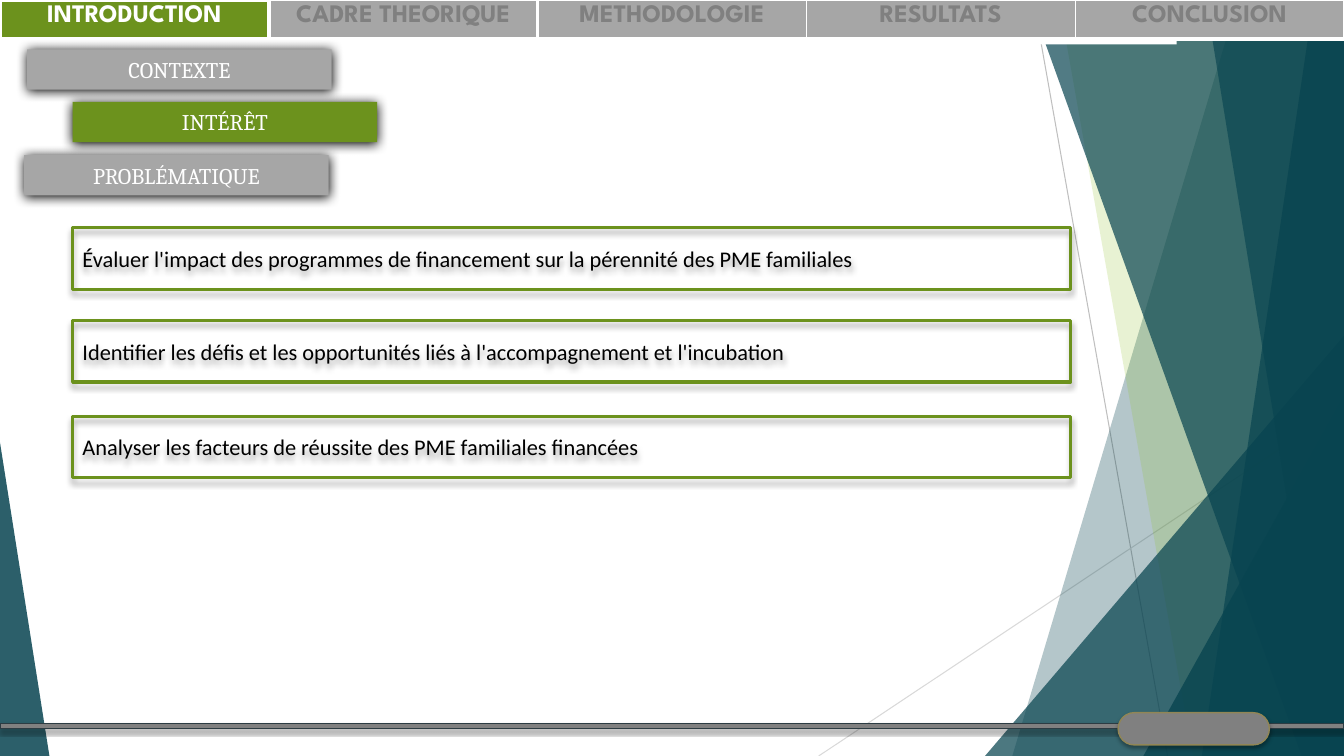
from pptx import Presentation
from pptx.dml.color import RGBColor
from pptx.enum.shapes import MSO_CONNECTOR, MSO_SHAPE
from pptx.enum.text import MSO_ANCHOR as Anchor, PP_ALIGN as Align
from pptx.oxml.ns import qn
from pptx.util import Inches, Pt
from lxml.etree import SubElement

WIDTH, HEIGHT = 13.33, 7.5
WHITE = RGBColor(0xFF, 0xFF, 0xFF)
BLACK = RGBColor(0, 0, 0)
TEAL = RGBColor(0x08, 0x44, 0x50)
LIME = RGBColor(0x90, 0xC2, 0x26)
GREEN = RGBColor(0x6C, 0x92, 0x1D)
GREY = RGBColor(0xA6, 0xA6, 0xA6)
DARK_GREY = RGBColor(0x80, 0x80, 0x80)
LINE_GREY = RGBColor(0xBF, 0xBF, 0xBF)
PALE_GREY = RGBColor(0xD9, 0xD9, 0xD9)
SLATE = RGBColor(0x2C, 0x3C, 0x43)
OLIVE = RGBColor(0x91, 0x86, 0x55)

# Shadows: opacity in percent, blur and distance in points
BOX_SHADOW = (35, 4, 3)
BAR_SHADOW = (35, 3, 2)
BUTTON_SHADOW = (100, 8.5, 1)


def write_text(frame, text, font="Calibri", size=16, color=BLACK, bold=False,
               align=Align.CENTER):
    paragraph = frame.paragraphs[0]
    paragraph.alignment = align
    run = paragraph.add_run()
    run.text = text
    run.font.name = font
    run.font.size = Pt(size)
    run.font.bold = bold
    run.font.color.rgb = color


def style_shape(shape, fill=None, opacity=100, line=None, line_width=1, shadow=None):
    if fill is None:
        shape.fill.background()
    else:
        shape.fill.solid()
        shape.fill.fore_color.rgb = fill
        if opacity < 100:
            color = shape._element.spPr.find(qn("a:solidFill")).find(qn("a:srgbClr"))
            SubElement(color, qn("a:alpha"), val=str(opacity * 1000))
    if line is None:
        shape.line.fill.background()
    else:
        shape.line.color.rgb = line
        shape.line.width = Pt(line_width)
    shape.shadow.inherit = False
    if shadow:
        strength, blur, distance = shadow
        effects = shape._element.spPr.find(qn("a:effectLst"))
        outer = SubElement(effects, qn("a:outerShdw"), blurRad=str(Pt(blur)),
                           dist=str(Pt(distance)), dir="5400000",
                           algn="ctr", rotWithShape="0")
        color = SubElement(outer, qn("a:srgbClr"), val="000000")
        SubElement(color, qn("a:alpha"), val=str(strength * 1000))


def add_block(slide, left, top, width, height, kind=MSO_SHAPE.RECTANGLE,
              adjustment=None, **style):
    shape = slide.shapes.add_shape(kind, Inches(left), Inches(top),
                                   Inches(width), Inches(height))
    if adjustment is not None:
        shape.adjustments[0] = adjustment
    style_shape(shape, **style)
    shape.text_frame.word_wrap = True
    shape.text_frame.vertical_anchor = Anchor.MIDDLE
    return shape


def add_triangle(slide, left, top, width, apex, opacity):
    add_block(slide, left, top, width, HEIGHT - top, MSO_SHAPE.ISOSCELES_TRIANGLE,
              apex, fill=TEAL, opacity=opacity)


def add_wedge(slide, top_x, bottom_x, fill, opacity):
    """Full-height panel with a slanted left edge, flush with the right side."""
    builder = slide.shapes.build_freeform(Inches(top_x), Inches(-0.01))
    corners = [(WIDTH, -0.01), (WIDTH, HEIGHT), (bottom_x, HEIGHT)]
    builder.add_line_segments([(Inches(x), Inches(y)) for x, y in corners])
    style_shape(builder.convert_to_shape(), fill=fill, opacity=opacity)


def add_line(slide, start, end, color):
    ends = [Inches(value) for value in start + end]
    line = slide.shapes.add_connector(MSO_CONNECTOR.STRAIGHT, *ends)
    line.line.color.rgb = color
    line.line.width = Pt(0.75)
    SubElement(line._element.spPr, qn("a:effectLst"))


def add_background(slide):
    add_line(slide, (10.25, 0), (11.58, HEIGHT), LINE_GREY)
    add_line(slide, (WIDTH, 4.03), (8.12, HEIGHT), PALE_GREY)
    add_wedge(slide, 12.28, 10.04, TEAL, 30)
    add_wedge(slide, 10.5, 11.83, LIME, 20)
    add_triangle(slide, 9.77, 3.33, 3.56, 1, 72)
    add_wedge(slide, 10.21, 12.91, TEAL, 70)
    add_wedge(slide, 13.03, 11.92, TEAL, 70)
    add_wedge(slide, 11.96, 13.18, TEAL, 65)
    add_triangle(slide, 11.34, 3.93, 1.99, 1, 80)
    add_triangle(slide, 0, 4.39, 0.49, 0, 85)


def set_borders(cell, widths):
    """Draw white borders; widths are left, right, top and bottom in points."""
    properties = cell._tc.get_or_add_tcPr()
    for index, (side, width) in enumerate(zip("LRTB", widths)):
        border = properties.makeelement(qn(f"a:ln{side}"), {"w": str(Pt(width))})
        fill = SubElement(border, qn("a:solidFill"))
        SubElement(fill, qn("a:srgbClr"), val=str(WHITE))
        properties.insert(index, border)


def add_navigation(slide, titles, current):
    table = slide.shapes.add_table(1, len(titles), 0, 0,
                                   Inches(WIDTH), Inches(0.39)).table
    table.first_row = table.horz_banding = False
    for index, title in enumerate(titles):
        active = index == current
        table.columns[index].width = Inches(WIDTH / len(titles))
        cell = table.cell(0, index)
        cell.fill.solid()
        cell.fill.fore_color.rgb = GREEN if active else GREY
        write_text(cell.text_frame, title, font="League Spartan", size=18,
                   bold=True, color=WHITE if active else DARK_GREY)
        left = 3 if index <= 2 else 1
        right = 3 if index <= 1 else 1
        set_borders(cell, (left, right, 3 if active else 1, 3))


def add_button(slide, left, top, text, fill):
    button = add_block(slide, left, top, 3.02, 0.4, fill=fill, shadow=BUTTON_SHADOW)
    write_text(button.text_frame, text, font="Cambria", color=WHITE)


def add_goal(slide, top, text):
    box = add_block(slide, 0.72, top, 9.9, 0.61, line=GREEN, line_width=2.25,
                    shadow=BOX_SHADOW)
    write_text(box.text_frame, text, align=Align.JUSTIFY)


def main():
    presentation = Presentation()
    presentation.slide_width = Inches(WIDTH)
    presentation.slide_height = Inches(HEIGHT)
    slide = presentation.slides.add_slide(presentation.slide_layouts[6])

    add_background(slide)

    # Chapter navigation on its white strip
    add_block(slide, 1.67, 0, 10, 0.44, fill=WHITE)
    add_navigation(slide, ["INTRODUCTION", "CADRE THEORIQUE", "METHODOLOGIE",
                           "RESULTATS", "CONCLUSION"], current=0)

    # Footer bar and page badge
    add_block(slide, 0, 7.18, WIDTH, 0.05, fill=DARK_GREY, line=SLATE,
              shadow=BAR_SHADOW)
    add_block(slide, 11.09, 7.07, 1.5, 0.32, MSO_SHAPE.ROUNDED_RECTANGLE, 0.5,
              fill=DARK_GREY, line=OLIVE, shadow=BAR_SHADOW)

    # Section buttons
    add_button(slide, 0.27, 0.49, "CONTEXTE", GREY)
    add_button(slide, 0.72, 1.01, "INTÉRÊT", GREEN)
    add_button(slide, 0.24, 1.54, "PROBLÉMATIQUE", GREY)

    # Points of interest
    add_goal(slide, 2.26, "Évaluer l'impact des programmes de financement "
                          "sur la pérennité des PME familiales")
    add_goal(slide, 3.18, "Identifier les défis et les opportunités liés à "
                          "l'accompagnement et l'incubation")
    add_goal(slide, 4.13, "Analyser les facteurs de réussite des PME "
                          "familiales financées")

    presentation.save("out.pptx")


if __name__ == "__main__":
    main()
